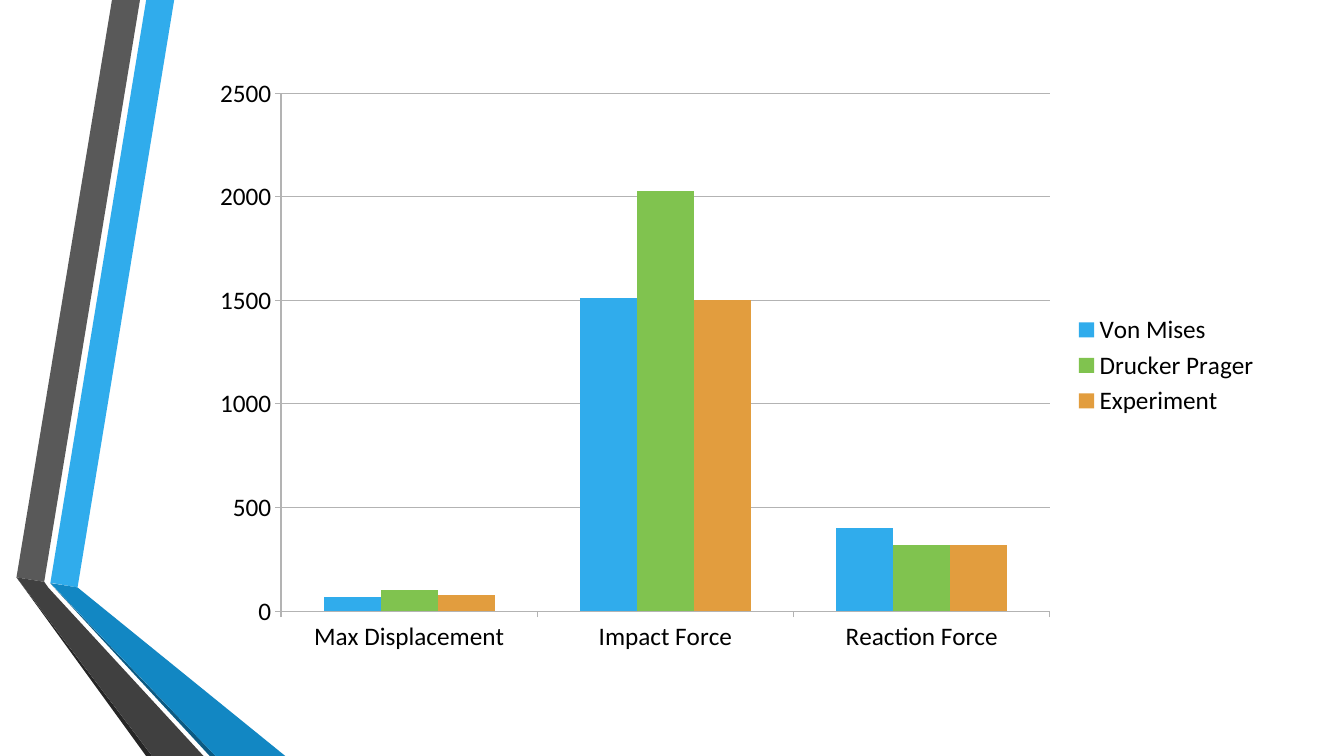
from dataclasses import dataclass

from lxml.etree import SubElement
from pptx import Presentation
from pptx.chart.axis import _BaseAxis
from pptx.chart.chart import Chart
from pptx.chart.data import CategoryChartData
from pptx.dml.color import RGBColor
from pptx.dml.line import LineFormat
from pptx.enum.chart import XL_CHART_TYPE, XL_LEGEND_POSITION, XL_TICK_MARK
from pptx.oxml.ns import qn
from pptx.slide import Slide
from pptx.text.text import Font
from pptx.util import Pt


@dataclass(frozen=True)
class Theme:
    sky: str = "30ACEC"
    blue: str = "1287C3"
    navy: str = "0C5A82"
    grey: str = "595959"
    coal: str = "404040"
    ink: str = "262626"
    green: str = "80C34F"
    amber: str = "E29D3E"
    rule: str = "B3B3B3"
    text: str = "000000"
    face: str = "Calibri"
    size: float = 18


@dataclass(frozen=True)
class Ribbon:
    color: str
    points: tuple[tuple[float, float], ...]


@dataclass(frozen=True)
class Series:
    name: str
    values: tuple[int, ...]
    color: str


@dataclass(frozen=True)
class Frame:
    left: float
    top: float
    width: float
    height: float


THEME = Theme()
WIDTH, HEIGHT = 960, 540
CHART = Frame(142.6, 47.5, 764.6, 427)
PLOT = Frame(200.7, 66.6, 549.2, 370)

RIBBONS = (
    Ribbon(THEME.sky, ((36, 416.2), (55.4, 419.6), (124.4, 0), (104.4, 0))),
    Ribbon(THEME.grey, ((100, 0), (80, 0), (11.8, 412.4), (31.6, 415.6))),
    Ribbon(THEME.ink, ((11.8, 412.4), (104.4, HEIGHT), (108.7, HEIGHT))),
    Ribbon(THEME.navy, ((36, 416.8), (149.8, HEIGHT), (154, HEIGHT))),
    Ribbon(THEME.blue, ((36, 416.5), (154, HEIGHT), (203.8, HEIGHT), (55.4, 419.6))),
    Ribbon(THEME.coal, ((145.4, HEIGHT), (34.6, 419.8), (31.6, 415.6),
                        (11.8, 412.4), (108.7, HEIGHT))),
)
GROUPS = ("Max Displacement", "Impact Force", "Reaction Force")
SERIES = (
    Series("Von Mises", (70, 1510, 400), THEME.sky),
    Series("Drucker Prager", (100, 2030, 320), THEME.green),
    Series("Experiment", (80, 1500, 320), THEME.amber),
)


def set_font(font: Font, *, face: str = THEME.face, size: float = THEME.size,
             color: str = THEME.text) -> None:
    font.name = face
    font.size = Pt(size)
    font.color.rgb = RGBColor.from_string(color)


def set_line(line: LineFormat) -> None:
    line.color.rgb = RGBColor.from_string(THEME.rule)
    line.width = Pt(0.75)


def draw_ribbon(slide: Slide, ribbon: Ribbon) -> None:
    start, *rest = [(Pt(x), Pt(y)) for x, y in ribbon.points]
    pen = slide.shapes.build_freeform(*start)
    pen.add_line_segments(rest, close=True)
    shape = pen.convert_to_shape()
    shape.shadow.inherit = False
    shape.fill.solid()
    shape.fill.fore_color.rgb = RGBColor.from_string(ribbon.color)
    shape.line.fill.background()


def place_plot(chart: Chart, outer: Frame, inner: Frame) -> None:
    area = chart.plots[0]._element.getparent()
    layout = area.find(qn("c:layout"))
    if layout is None:
        layout = SubElement(area, qn("c:layout"))
        area.insert(0, layout)
    manual = SubElement(layout, qn("c:manualLayout"))
    parts = {
        "layoutTarget": "inner",
        "xMode": "edge",
        "yMode": "edge",
        "x": (inner.left - outer.left) / outer.width,
        "y": (inner.top - outer.top) / outer.height,
        "w": inner.width / outer.width,
        "h": inner.height / outer.height,
    }
    for tag, value in parts.items():
        SubElement(manual, qn(f"c:{tag}")).set("val", str(value))


def style_axis(axis: _BaseAxis, grid: bool) -> None:
    axis.major_tick_mark = XL_TICK_MARK.OUTSIDE
    axis.minor_tick_mark = XL_TICK_MARK.NONE
    axis.has_major_gridlines = grid
    set_line(axis.format.line)
    if grid:
        set_line(axis.major_gridlines.format.line)


def draw_chart(slide: Slide, frame: Frame) -> None:
    data = CategoryChartData()
    data.categories = GROUPS
    for item in SERIES:
        data.add_series(item.name, item.values)
    chart = slide.shapes.add_chart(
        XL_CHART_TYPE.COLUMN_CLUSTERED, Pt(frame.left), Pt(frame.top),
        Pt(frame.width), Pt(frame.height), data).chart
    set_font(chart.font)
    chart.has_title = False
    chart.has_legend = True
    chart.legend.position = XL_LEGEND_POSITION.RIGHT
    chart.legend.include_in_layout = False
    style_axis(chart.category_axis, grid=False)
    style_axis(chart.value_axis, grid=True)
    chart.value_axis.minimum_scale = 0
    chart.value_axis.maximum_scale = 2500
    chart.value_axis.major_unit = 500
    plot = chart.plots[0]
    plot.gap_width = 150
    plot.overlap = 0
    plot.vary_by_categories = False
    for bars, item in zip(plot.series, SERIES):
        bars.format.fill.solid()
        bars.format.fill.fore_color.rgb = RGBColor.from_string(item.color)
    place_plot(chart, frame, PLOT)


def main() -> None:
    deck = Presentation()
    deck.slide_width, deck.slide_height = Pt(WIDTH), Pt(HEIGHT)
    slide = deck.slides.add_slide(deck.slide_layouts.get_by_name("Blank"))
    for ribbon in RIBBONS:
        draw_ribbon(slide, ribbon)
    draw_chart(slide, CHART)
    deck.save("out.pptx")


if __name__ == "__main__":
    main()
